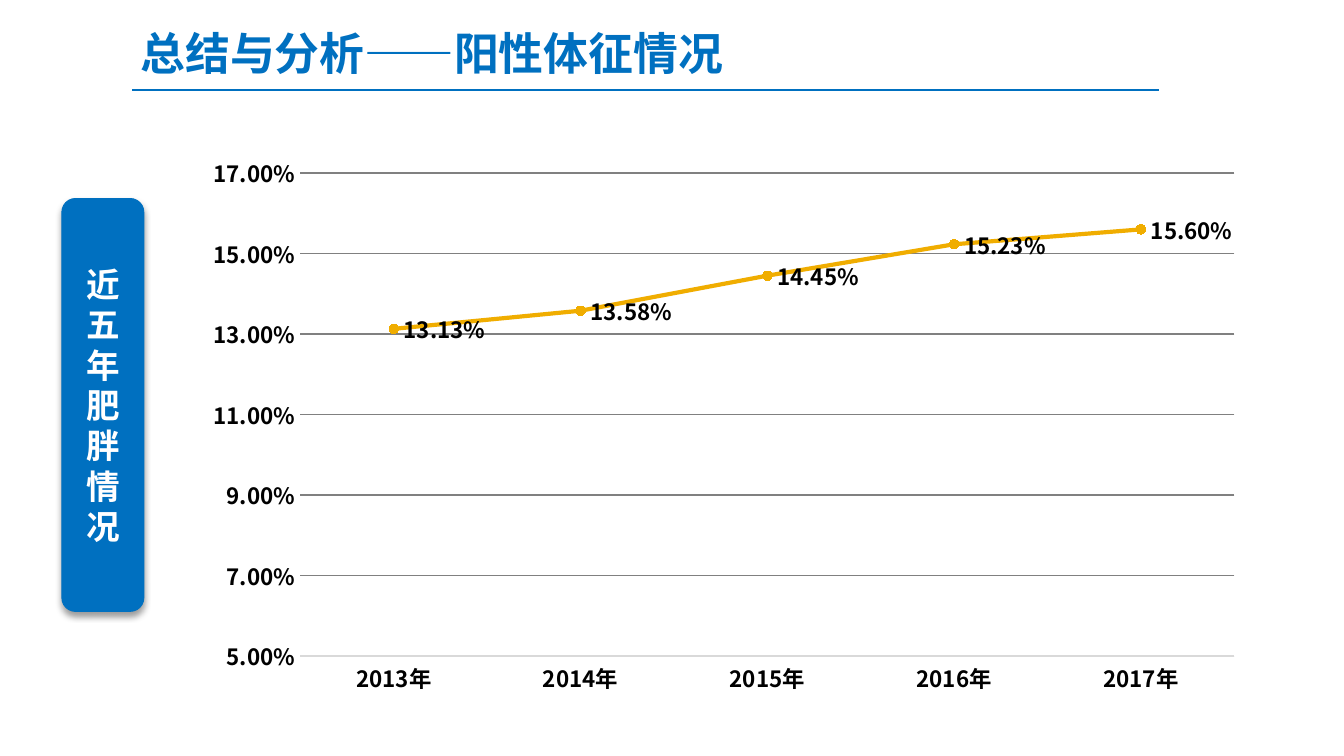
from lxml import etree
from pptx import Presentation
from pptx.chart.data import CategoryChartData
from pptx.dml.color import RGBColor
from pptx.enum.chart import XL_CHART_TYPE as CT, XL_LABEL_POSITION as LP
from pptx.enum.chart import XL_MARKER_STYLE as MS, XL_TICK_MARK as TM
from pptx.enum.shapes import MSO_CONNECTOR as CONN, MSO_SHAPE as SHAPE
from pptx.enum.text import MSO_ANCHOR as ANCHOR, MSO_AUTO_SIZE as AUTO, PP_ALIGN as ALIGN
from pptx.oxml import parse_xml
from pptx.oxml.ns import qn
from pptx.util import Cm, Pt

FONT = "Noto Sans CJK SC"
COLORS = {"blue": "0070C0", "white": "FFFFFF", "black": "000000",
          "gold": "F0AD00", "grid": "808080", "axis": "D9D9D9"}
RATES = {"2013年": 0.1313, "2014年": 0.1358, "2015年": 0.1445,
         "2016年": 0.1523, "2017年": 0.156}
SHADOW = ('<a:effectLst xmlns:a="http://schemas.openxmlformats.org/drawingml/2006/main">'
          '<a:outerShdw blurRad="44450" dist="25400" dir="5400000" rotWithShape="0">'
          '<a:srgbClr val="000000"><a:alpha val="38000"/></a:srgbClr>'
          '</a:outerShdw></a:effectLst>')


def rgb(name):
    return RGBColor.from_string(COLORS[name])


def style_font(font, size, color):
    font.name, font.size, font.bold = FONT, Pt(size), True
    font.color.rgb = rgb(color)


def style_line(line, color, width):
    line.color.rgb = rgb(color)
    line.width = Pt(width)


def style_paragraph(p, size, color, align, spacing):
    p.alignment, p.line_spacing = align, spacing
    for r in p.runs:
        style_font(r.font, size, color)
        ea = etree.SubElement(r.font._element, qn("a:ea"))
        ea.set("typeface", FONT)


def add_heading(slide, box, text):
    x, y, w, h = box
    sp = slide.shapes.title
    sp.left, sp.top, sp.width, sp.height = Cm(x), Cm(y), Cm(w), Cm(h)
    tf = sp.text_frame
    tf.text = text
    tf.word_wrap, tf.auto_size = False, AUTO.NONE
    tf.vertical_anchor = ANCHOR.TOP
    style_paragraph(tf.paragraphs[0], 24, "blue", ALIGN.LEFT, 1.2)


def add_rule(slide, x, y, w):
    rule = slide.shapes.add_connector(CONN.STRAIGHT, Cm(x), Cm(y), Cm(x + w), Cm(y))
    style_line(rule.line, "blue", 1.25)
    etree.SubElement(rule._element.spPr, qn("a:effectLst"))


def add_side_label(slide, box, text):
    sp = slide.shapes.add_shape(SHAPE.ROUNDED_RECTANGLE, *map(Cm, box))
    sp.fill.solid()
    sp.fill.fore_color.rgb = rgb("blue")
    style_line(sp.line, "blue", 0.5)
    sp._element.spPr.append(parse_xml(SHADOW))
    tf = sp.text_frame
    tf.text = text
    tf.word_wrap, tf.vertical_anchor = True, ANCHOR.MIDDLE
    style_paragraph(tf.paragraphs[0], 18, "white", ALIGN.CENTER, Pt(21.6))


def add_rate_chart(slide, box, rates):
    data = CategoryChartData(number_format="0.00%")
    data.categories = list(rates)
    data.add_series("Series 1", list(rates.values()))
    chart = slide.shapes.add_chart(CT.LINE_MARKERS, *map(Cm, box), data).chart
    chart.has_legend = chart.has_title = False
    style_font(chart.font, 12, "black")

    cat, val = chart.category_axis, chart.value_axis
    for axis in (cat, val):
        axis.major_tick_mark = axis.minor_tick_mark = TM.NONE
        style_font(axis.tick_labels.font, 12, "black")
    style_line(cat.format.line, "axis", 0.75)
    val.format.line.fill.background()
    val.minimum_scale, val.maximum_scale, val.major_unit = 0.05, 0.17, 0.02
    val.tick_labels.number_format = "0.00%"
    val.tick_labels.number_format_is_linked = False
    style_line(val.major_gridlines.format.line, "grid", 0.75)

    plot = chart.plots[0]
    plot.vary_by_categories = False
    series = plot.series[0]
    series.smooth = False
    style_line(series.format.line, "gold", 2.25)
    marker = series.marker
    marker.style, marker.size = MS.CIRCLE, 5
    marker.format.fill.solid()
    marker.format.fill.fore_color.rgb = rgb("gold")
    style_line(marker.format.line, "gold", 0.75)
    labels = series.data_labels
    labels.show_value, labels.position = True, LP.RIGHT
    labels.number_format, labels.number_format_is_linked = "0.00%", False
    style_font(labels.font, 12, "black")


def main():
    prs = Presentation()
    prs.slide_width, prs.slide_height = Cm(25.4), Cm(14.28)
    slide = prs.slides.add_slide(prs.slide_layouts[5])
    add_rule(slide, 2.5, 1.7, 19.4)
    add_heading(slide, (2.4, 0.15, 11.76, 1.5), "总结与分析——阳性体征情况")
    add_side_label(slide, (1.17, 3.75, 1.55, 7.8), "近五年肥胖情况")
    add_rate_chart(slide, (3.63, 2.74, 20.1, 10.6), RATES)
    prs.save("out.pptx")


if __name__ == "__main__":
    main()
